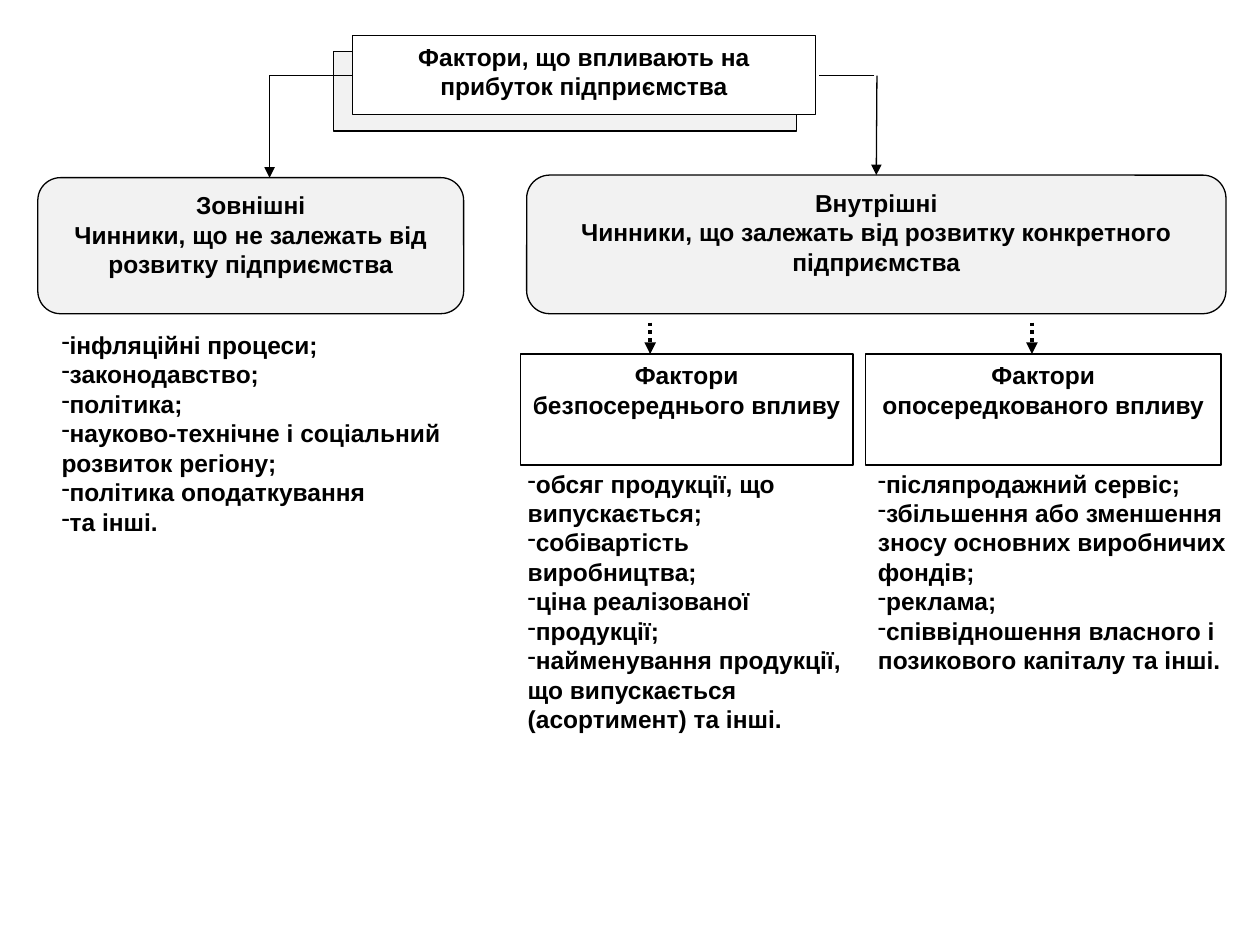
import pptx
import pptx.util
import pptx.dml.color
import pptx.enum.dml
import pptx.enum.shapes
import pptx.enum.text
import pptx.oxml
import pptx.oxml.ns

Inches = pptx.util.Inches
Pt = pptx.util.Pt
RGB = pptx.dml.color.RGBColor.from_string
MSO = pptx.enum.shapes.MSO_SHAPE
CONN = pptx.enum.shapes.MSO_CONNECTOR
ALIGN = pptx.enum.text.PP_ALIGN
qn = pptx.oxml.ns.qn

COLORS = {"ink": "000000", "paper": "FFFFFF", "grey": "C0C0C0"}
FONT = {"name": "Arial", "size": Pt(14), "bold": True}
FRAME = {
    "word_wrap": True,
    "auto_size": pptx.enum.text.MSO_AUTO_SIZE.NONE,
    "vertical_anchor": pptx.enum.text.MSO_ANCHOR.TOP,
}


def write(sp, lines, bullet=False):
    tf = sp.text_frame
    for key, value in FRAME.items():
        setattr(tf, key, value)
    for i, line in enumerate(lines):
        p = tf.paragraphs[0] if i == 0 else tf.add_paragraph()
        p.alignment = ALIGN.LEFT if bullet else ALIGN.CENTER
        r = p.add_run()
        r.text = line
        for key, value in FONT.items():
            setattr(r.font, key, value)
        r.font.color.rgb = RGB(COLORS["ink"])
        if bullet:
            pPr = p._p.get_or_add_pPr()
            pPr.set("marL", "0")
            pPr.set("indent", "0")
            pptx.oxml.ns.qn("a:buChar")
            bu = pPr.makeelement(qn("a:buChar"), {"char": "-"})
            pPr.append(bu)


def paint(sp, fill):
    sp.fill.solid()
    sp.fill.fore_color.rgb = RGB(COLORS[fill])
    if fill == "grey":
        clr = sp.element.spPr.find(qn("a:solidFill"))[0]
        clr.append(clr.makeelement(qn("a:alpha"), {"val": "20000"}))
    sp.line.color.rgb = RGB(COLORS["ink"])
    sp.line.width = Pt(0.75)


prs = pptx.Presentation()
prs.slide_width = Inches(10)
prs.slide_height = Inches(7.5)
s = prs.slides.add_slide(prs.slide_layouts[5])

title = s.shapes.title
for key, value in {"left": 2.8, "top": 0.28, "width": 3.67, "height": 0.63}.items():
    setattr(title, key, Inches(value))
paint(title, "paper")
write(title, ["Фактори, що впливають на прибуток підприємства"])

boxes = {
    "backing": (MSO.RECTANGLE, (2.65, 0.41, 3.67, 0.63), "grey", []),
    "external": (MSO.ROUNDED_RECTANGLE, (0.3, 1.41, 3.38, 1.08), "grey",
                 ["Зовнішні", "Чинники, що не залежать від розвитку підприємства"]),
    "internal": (MSO.ROUNDED_RECTANGLE, (4.18, 1.39, 5.55, 1.1), "grey",
                 ["Внутрішні", "Чинники, що залежать від розвитку конкретного підприємства"]),
    "direct": (MSO.RECTANGLE, (4.13, 2.81, 2.64, 0.88), "paper",
               ["Фактори безпосереднього впливу"]),
    "indirect": (MSO.RECTANGLE, (6.87, 2.81, 2.82, 0.88), "paper",
                 ["Фактори опосередкованого впливу"]),
}
shapes = {}
for name, (kind, at, fill, lines) in boxes.items():
    sp = s.shapes.add_shape(kind, *map(Inches, at))
    sp.shadow.inherit = False
    paint(sp, fill)
    write(sp, lines)
    shapes[name] = sp
title.element.addprevious(shapes["backing"].element)

lists = [
    ((0.39, 2.57, 3.24, 2.52),
     ["інфляційні процеси;", "законодавство;", "політика;",
      "науково-технічне і соціальний розвиток регіону;",
      "політика оподаткування", "та інші."]),
    ((4.09, 3.67, 2.87, 3.38),
     ["обсяг продукції, що випускається;", "собівартість виробництва;",
      "ціна реалізованої", "продукції;",
      "найменування продукції, що випускається (асортимент) та інші."]),
    ((6.87, 3.67, 2.96, 3),
     ["післяпродажний сервіс;",
      "збільшення або зменшення зносу основних виробничих фондів;", "реклама;",
      "співвідношення власного і позикового капіталу та інші."]),
]
for at, lines in lists:
    write(s.shapes.add_textbox(*map(Inches, at)), lines, bullet=True)

connectors = [
    (CONN.ELBOW, (2.8, 0.6, 2.14, 1.41), 0.75, True, None),
    (CONN.STRAIGHT, (6.96, 0.6, 6.96, 1.39), 0.75, True, "internal"),
    (CONN.STRAIGHT, (6.94, 0.6, 6.5, 0.6), 0.75, False, None),
    (CONN.STRAIGHT, (5.16, 2.56, 5.16, 2.81), 2.25, True, None),
    (CONN.STRAIGHT, (8.19, 2.56, 8.19, 2.81), 2.25, True, None),
]
for kind, ends, width, arrow, target in connectors:
    c = s.shapes.add_connector(kind, *map(Inches, ends))
    c.line.color.rgb = RGB(COLORS["ink"])
    c.line.width = Pt(width)
    if width > 1:
        c.line.dash_style = pptx.enum.dml.MSO_LINE.ROUND_DOT
    if target:
        c.end_connect(shapes[target], 0)
    spPr = c.element.spPr
    if kind == CONN.ELBOW:
        spPr.find(qn("a:prstGeom")).set("prst", "bentConnector2")
    if arrow:
        ln = spPr.find(qn("a:ln"))
        ln.append(ln.makeelement(qn("a:tailEnd"), {"type": "triangle"}))
    spPr.append(spPr.makeelement(qn("a:effectLst"), {}))

prs.save("out.pptx")
